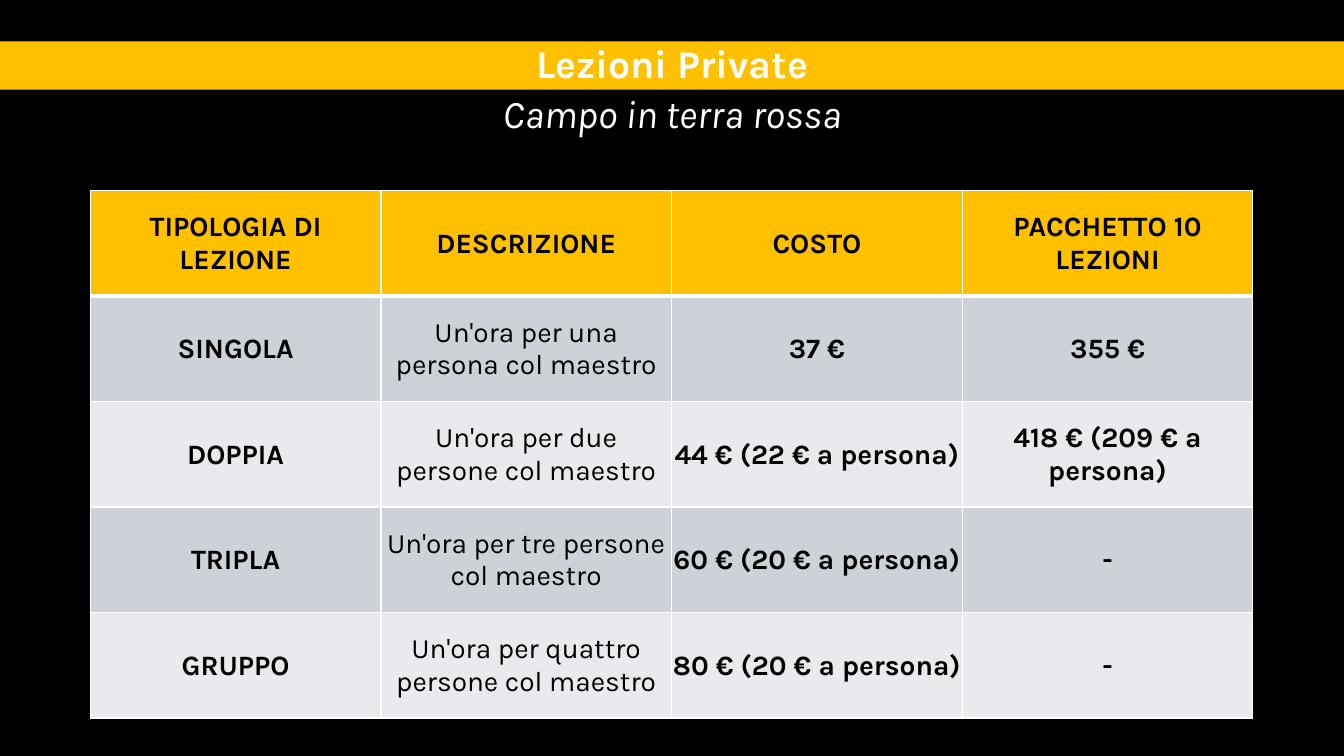
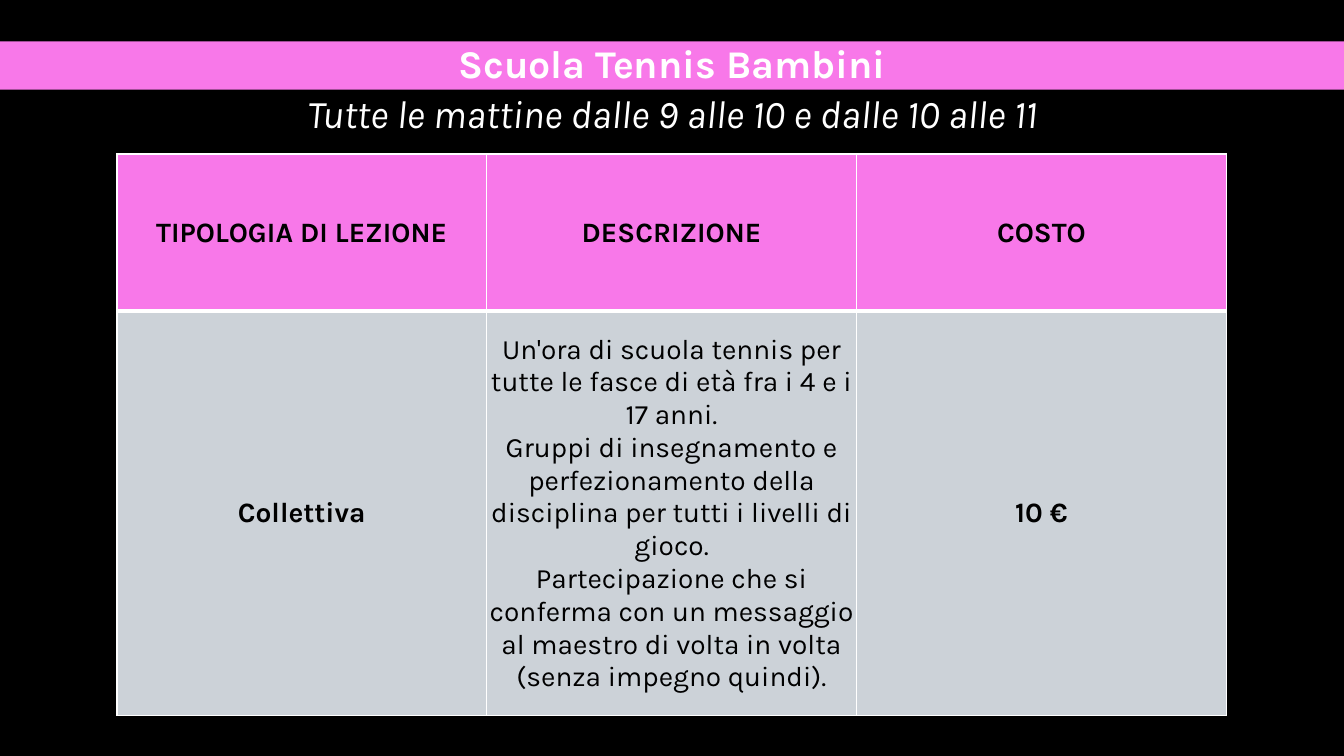
import pptx
import pptx.dml.color
import pptx.enum.shapes
import pptx.enum.text
import pptx.oxml
import pptx.oxml.ns
import pptx.util

Pt = pptx.util.Pt
ANCHOR = pptx.enum.text.MSO_ANCHOR
ALIGN = pptx.enum.text.PP_ALIGN

COLORS = {
    "background": "000000",
    "private": "FFC000",
    "school": "F878E9",
    "odd_row": "CCD2D8",
    "even_row": "E8EAED",
    "light": "FFFFFF",
    "dark": "000000",
}
FONT = "Karla"
SLIDE_SIZE = (960, 540)
BAND_BOX = (0, 29.5, 960, 34.5)
SUBTITLE_BOX = (163.5, 65.5, 633, 34.5)
TITLE_FORMAT = {"name": FONT, "size": Pt(28), "bold": True, "italic": False}
SUBTITLE_FORMAT = {"name": FONT, "size": Pt(28), "bold": False, "italic": True}
HEADING_FRAME = {
    "margin_top": 0,
    "margin_bottom": 0,
    "vertical_anchor": ANCHOR.MIDDLE,
    "word_wrap": True,
}
CELL_FORMAT = {
    "margin_left": Pt(0.75),
    "margin_right": Pt(0.75),
    "margin_top": Pt(0.75),
    "margin_bottom": 0,
    "vertical_anchor": ANCHOR.MIDDLE,
}
DESCRIPTION_COLUMN = 1

PRIVATE_LESSONS = [
    ["TIPOLOGIA DI LEZIONE", "DESCRIZIONE", "COSTO", "PACCHETTO 10 LEZIONI"],
    ["SINGOLA", "Un'ora per una persona col maestro", "37 €", "355 €"],
    ["DOPPIA", "Un'ora per due persone col maestro", "44 € (22 € a persona)",
     "418 € (209 € a persona)"],
    ["TRIPLA", "Un'ora per tre persone col maestro", "60 € (20 € a persona)", "-"],
    ["GRUPPO", "Un'ora per quattro persone col maestro", "80 € (20 € a persona)", "-"],
]
SCHOOL_DESCRIPTION = "\n".join([
    "Un'ora di scuola tennis per tutte le fasce di età fra i 4 e i 17 anni.",
    "Gruppi di insegnamento e perfezionamento della disciplina per tutti i livelli di gioco.",
    "Partecipazione che si conferma con un messaggio al maestro di volta in volta "
    "(senza impegno quindi).",
])
SCHOOL_LESSONS = [
    ["TIPOLOGIA DI LEZIONE", "DESCRIZIONE", "COSTO"],
    ["Collettiva", SCHOOL_DESCRIPTION, "10 €"],
]


def rgb(color):
    return pptx.dml.color.RGBColor.from_string(COLORS[color])


def paint(fill, color):
    fill.solid()
    fill.fore_color.rgb = rgb(color)


def apply_format(target, values):
    for attribute, value in values.items():
        setattr(target, attribute, value)


def write(frame, text, color, font_format, line_spacing):
    frame.text = text
    for paragraph in frame.paragraphs:
        paragraph.alignment = ALIGN.CENTER
        paragraph.line_spacing = line_spacing
        for run in paragraph.runs:
            apply_format(run.font, font_format)
            run.font.color.rgb = rgb(color)


def add_title_band(slide, box, title, accent):
    band = slide.shapes.add_shape(
        pptx.enum.shapes.MSO_SHAPE.RECTANGLE, *map(Pt, box))
    band.shadow.inherit = False
    paint(band.fill, accent)
    band.line.fill.background()
    apply_format(band.text_frame, HEADING_FRAME)
    write(band.text_frame, title, "light", TITLE_FORMAT, 0.9)


def add_subtitle(slide, box, text):
    subtitle = slide.shapes.add_textbox(*map(Pt, box))
    apply_format(subtitle.text_frame, HEADING_FRAME)
    write(subtitle.text_frame, text, "light", SUBTITLE_FORMAT, 0.9)


def set_borders(cell, widths):
    properties = cell._tc.get_or_add_tcPr()
    for side, width in widths.items():
        properties.append(pptx.oxml.parse_xml(
            f'<a:{side} {pptx.oxml.ns.nsdecls("a")} w="{Pt(width)}">'
            f'<a:solidFill><a:srgbClr val="{COLORS["light"]}"/></a:solidFill>'
            f'</a:{side}>'))


def add_price_table(slide, box, lessons, accent, header_height):
    left, top, width, height = box
    row_count, column_count = len(lessons), len(lessons[0])
    prices = slide.shapes.add_table(
        row_count, column_count, *map(Pt, box)).table
    prices.horz_banding = False
    for column in prices.columns:
        column.width = Pt(width / column_count)
    body_height = (height - header_height) / (row_count - 1)
    for r, lesson in enumerate(lessons):
        prices.rows[r].height = Pt(body_height if r else header_height)
        row_color = ("odd_row" if r % 2 else "even_row") if r else accent
        for c, text in enumerate(lesson):
            cell = prices.cell(r, c)
            apply_format(cell, CELL_FORMAT)
            set_borders(cell, {"lnL": 1, "lnR": 1,
                               "lnT": 3 if r == 1 else 1,
                               "lnB": 3 if r == 0 else 1})
            paint(cell.fill, row_color)
            bold = r == 0 or c != DESCRIPTION_COLUMN
            write(cell.text_frame, text, "dark",
                  {"name": FONT, "size": Pt(20), "bold": bold}, 1.0)


def add_lesson_slide(deck, title, subtitle, accent, lessons, table_box, header_height):
    slide = deck.slides.add_slide(deck.slide_layouts[6])
    paint(slide.background.fill, "background")
    add_title_band(slide, BAND_BOX, title, accent)
    add_price_table(slide, table_box, lessons, accent, header_height)
    add_subtitle(slide, SUBTITLE_BOX, subtitle)


def main():
    deck = pptx.Presentation()
    deck.slide_width, deck.slide_height = map(Pt, SLIDE_SIZE)
    add_lesson_slide(deck, "Lezioni Private", "Campo in terra rossa", "private",
                     PRIVATE_LESSONS, (64.5, 136, 830.5, 377), 75.4)
    add_lesson_slide(deck, "Scuola Tennis Bambini",
                     "Tutte le mattine dalle 9 alle 10 e dalle 10 alle 11", "school",
                     SCHOOL_LESSONS, (83.5, 110, 792.5, 401), 112)
    deck.save("out.pptx")


if __name__ == "__main__":
    main()
